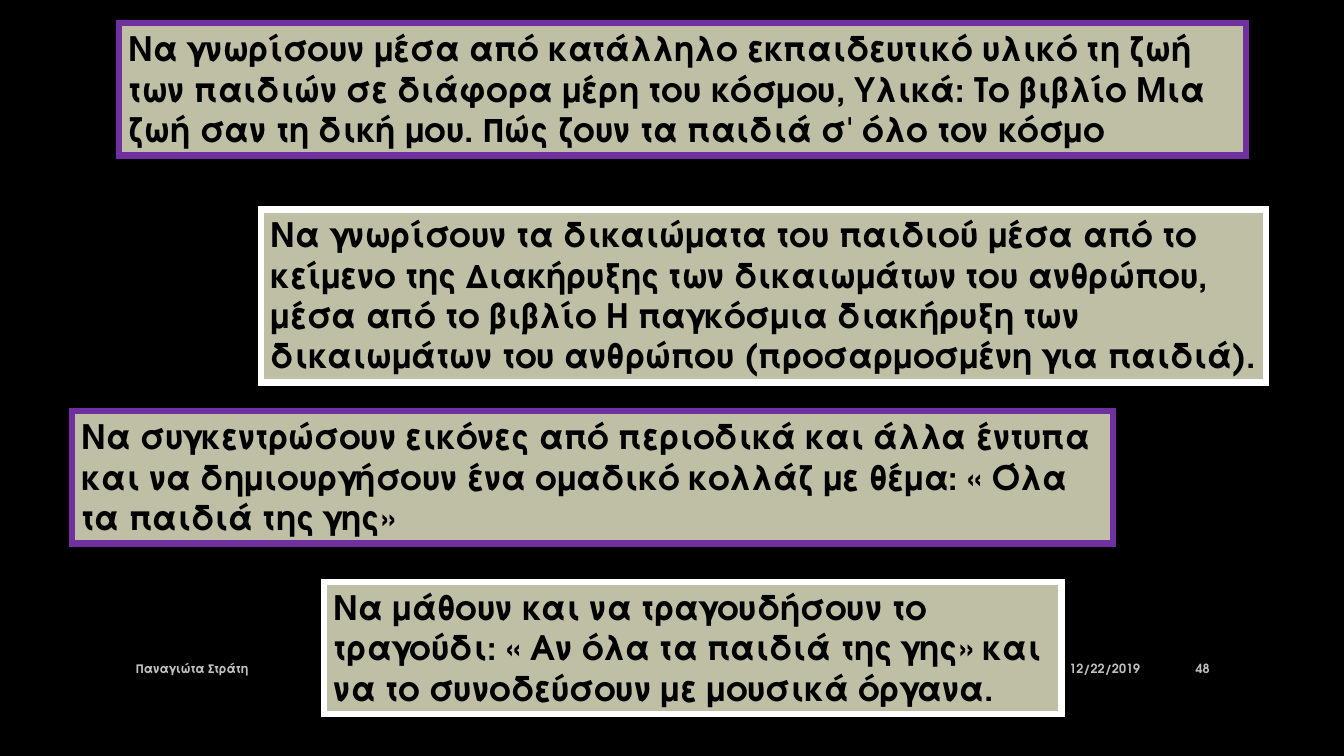
import lxml.etree
import pptx
import pptx.dml.color
import pptx.enum.shapes
import pptx.enum.text
import pptx.oxml.ns
import pptx.util

Pt = pptx.util.Pt
RGB = pptx.dml.color.RGBColor.from_string
Align = pptx.enum.text.PP_ALIGN
Anchor = pptx.enum.text.MSO_ANCHOR
Fit = pptx.enum.text.MSO_AUTO_SIZE


class Theme:
    font = "TeX Gyre Adventor"
    back = RGB("000000")
    ink = RGB("000000")
    sand = RGB("BFBFA5")
    plum = RGB("7030A0")
    white = RGB("FFFFFF")
    grey = RGB("BFBFBF")
    body = Pt(24)
    small = Pt(9)
    edge = Pt(4.5)


def write(shape, text, size=Theme.body, color=Theme.ink, align=Align.LEFT,
          anchor=Anchor.TOP, fit=Fit.NONE, right=Pt(7.2)):
    frame = shape.text_frame
    frame.word_wrap = True
    frame.auto_size = fit
    frame.vertical_anchor = anchor
    frame.margin_right = right
    para = frame.paragraphs[0]
    para.alignment = align
    run = para.add_run()
    run.text = text
    run.font.name = Theme.font
    run.font.size = size
    run.font.bold = True
    run.font.color.rgb = color


deck = pptx.Presentation()
deck.slide_width = Pt(960)
deck.slide_height = Pt(540)
slide = deck.slides.add_slide(deck.slide_layouts[6])
slide.background.fill.solid()
slide.background.fill.fore_color.rgb = Theme.back

# Footer: date, author, page number
footer = [
    (695.5, 126, "12/22/2019", Align.RIGHT),
    (90, 594, "Παναγιώτα Στράτη", Align.LEFT),
    (828, 43.2, "48", Align.RIGHT),
]
for left, width, text, align in footer:
    box = slide.shapes.add_textbox(Pt(left), Pt(463), Pt(width), Pt(28.8))
    write(box, text, size=Theme.small, color=Theme.grey,
          align=align, anchor=Anchor.MIDDLE)

# Goals: left, top, width, height, border, text
goals = [
    (85, 16.6, 805, 94.5, Theme.plum,
     "Να γνωρίσουν μέσα από κατάλληλο εκπαιδευτικό υλικό τη ζωή των παιδιών "
     "σε διάφορα μέρη του κόσμου, Υλικά: Το βιβλίο Μια ζωή σαν τη δική μου. "
     "Πώς ζουν τα παιδιά σ' όλο τον κόσμο"),
    (186.5, 149.6, 717.8, 123.6, Theme.white,
     "Να γνωρίσουν τα δικαιώματα του παιδιού μέσα από το κείμενο της "
     "Διακήρυξης των δικαιωμάτων του ανθρώπου, μέσα από το βιβλίο Η παγκόσμια "
     "διακήρυξη των δικαιωμάτων του ανθρώπου (προσαρμοσμένη για παιδιά)."),
    (51.4, 293.8, 743.6, 94.5, Theme.plum,
     "Να συγκεντρώσουν εικόνες από περιοδικά και άλλα έντυπα και να "
     "δημιουργήσουν ένα ομαδικό κολλάζ με θέμα: « Όλα τα παιδιά της γης»"),
    (231.4, 415.7, 526.8, 94.5, Theme.white,
     "Να μάθουν και να τραγουδήσουν το τραγούδι: « Αν όλα τα παιδιά της γης» "
     "και να το συνοδεύσουν με μουσικά όργανα."),
]
for left, top, width, height, border, text in goals:
    box = slide.shapes.add_shape(
        pptx.enum.shapes.MSO_SHAPE.RECTANGLE,
        Pt(left), Pt(top), Pt(width), Pt(height))
    box.shadow.inherit = False
    box.fill.solid()
    box.fill.fore_color.rgb = Theme.sand
    box.line.color.rgb = border
    box.line.width = Theme.edge
    # Square corners on the border
    edge = box.element.spPr.find(pptx.oxml.ns.qn("a:ln"))
    lxml.etree.SubElement(edge, pptx.oxml.ns.qn("a:miter"), lim="800000")
    write(box, text, fit=Fit.SHAPE_TO_FIT_TEXT, right=Pt(3))

deck.save("out.pptx")
